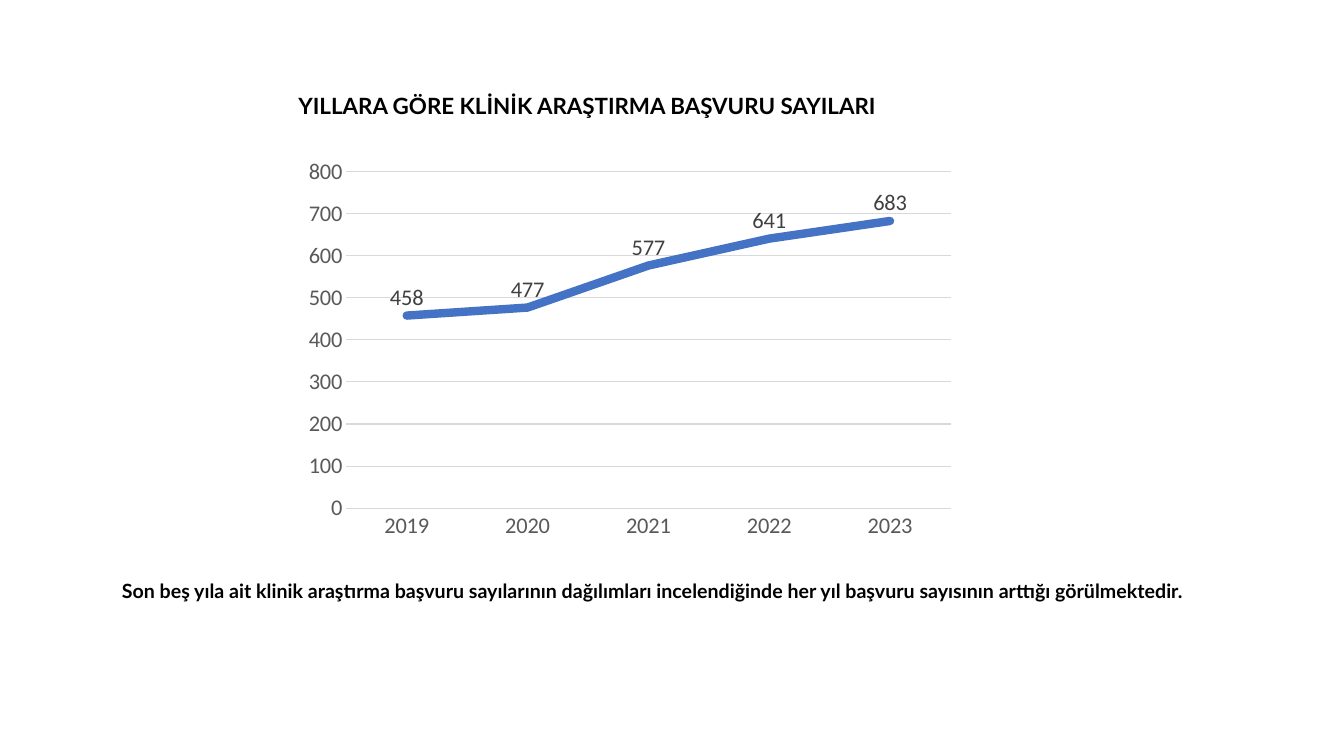
import pptx
import pptx.util
import pptx.dml.color
import pptx.chart.data
import pptx.enum.chart
import pptx.enum.text

PX = 9144  # EMU per px, 100 px to the inch
YEARS = ["2019", "2020", "2021", "2022", "2023"]
COUNTS = [458, 477, 577, 641, 683]


def px(*nums):
    return [pptx.util.Emu(n * PX) for n in nums]


def color(code):
    return pptx.dml.color.RGBColor.from_string(code)


def style(font, size, code, face, bold=False):
    font.size = pptx.util.Pt(size)
    font.name = face
    font.bold = bold
    font.color.rgb = color(code)


def stroke(line, code, width):
    line.color.rgb = color(code)
    line.width = pptx.util.Pt(width)


def write(shape, text, box, size=14, code="000000", face="Lato", bold=True):
    shape.left, shape.top, shape.width, shape.height = px(*box)
    frame = shape.text_frame
    frame.word_wrap = True
    frame.auto_size = pptx.enum.text.MSO_AUTO_SIZE.NONE
    frame.vertical_anchor = pptx.enum.text.MSO_ANCHOR.TOP
    para = frame.paragraphs[0]
    para.alignment = pptx.enum.text.PP_ALIGN.LEFT
    para.line_spacing = 1.5
    # Left indent of half an inch
    props = para._p.get_or_add_pPr()
    props.set("marL", str(50 * PX))
    props.set("indent", "0")
    run = para.add_run()
    run.text = text
    style(run.font, size, code, face, bold)


def add_line(slide, box):
    kinds = pptx.enum.chart
    data = pptx.chart.data.CategoryChartData()
    data.categories = YEARS
    data.add_series("Series 1", COUNTS)
    chart = slide.shapes.add_chart(
        kinds.XL_CHART_TYPE.LINE, *px(*box), data).chart
    chart.has_title = False
    chart.has_legend = False
    style(chart.font, 16, "000000", "Calibri")

    # Axes and grid
    years, counts = chart.category_axis, chart.value_axis
    for axis in (years, counts):
        axis.major_tick_mark = kinds.XL_TICK_MARK.NONE
        axis.minor_tick_mark = kinds.XL_TICK_MARK.NONE
        style(axis.tick_labels.font, 16, "595959", "Calibri")
    stroke(years.format.line, "D9D9D9", 0.75)
    counts.format.line.fill.background()
    counts.minimum_scale, counts.maximum_scale = 0, 800
    counts.major_unit = 100
    counts.has_major_gridlines = True
    stroke(counts.major_gridlines.format.line, "D9D9D9", 0.75)

    # Line with round ends
    chart.plots[0].vary_by_categories = False
    trend = chart.plots[0].series[0]
    trend.smooth = False
    trend.marker.style = kinds.XL_MARKER_STYLE.NONE
    line = trend.format.line
    stroke(line, "4472C4", 6)
    line._get_or_add_ln().set("cap", "rnd")

    # Value labels
    labels = trend.data_labels
    labels.show_value = True
    labels.position = kinds.XL_LABEL_POSITION.ABOVE
    style(labels.font, 16, "404040", "Calibri")


def main():
    deck = pptx.Presentation()
    deck.slide_width, deck.slide_height = px(1333, 750)
    slide = deck.slides.add_slide(deck.slide_layouts[5])

    # Heading, chart and remark
    write(slide.shapes.title,
          "YILLARA GÖRE KLİNİK ARAŞTIRMA BAŞVURU SAYILARI",
          (236, 73, 712, 45), size=16)
    add_line(slide, (293, 149, 663, 394))
    box = (61, 558, 1219, 45)
    write(slide.shapes.add_textbox(*px(*box)),
          "Son beş yıla ait klinik araştırma başvuru sayılarının dağılımları "
          "incelendiğinde her yıl başvuru sayısının arttığı görülmektedir.",
          box)

    deck.save("out.pptx")


if __name__ == "__main__":
    main()
